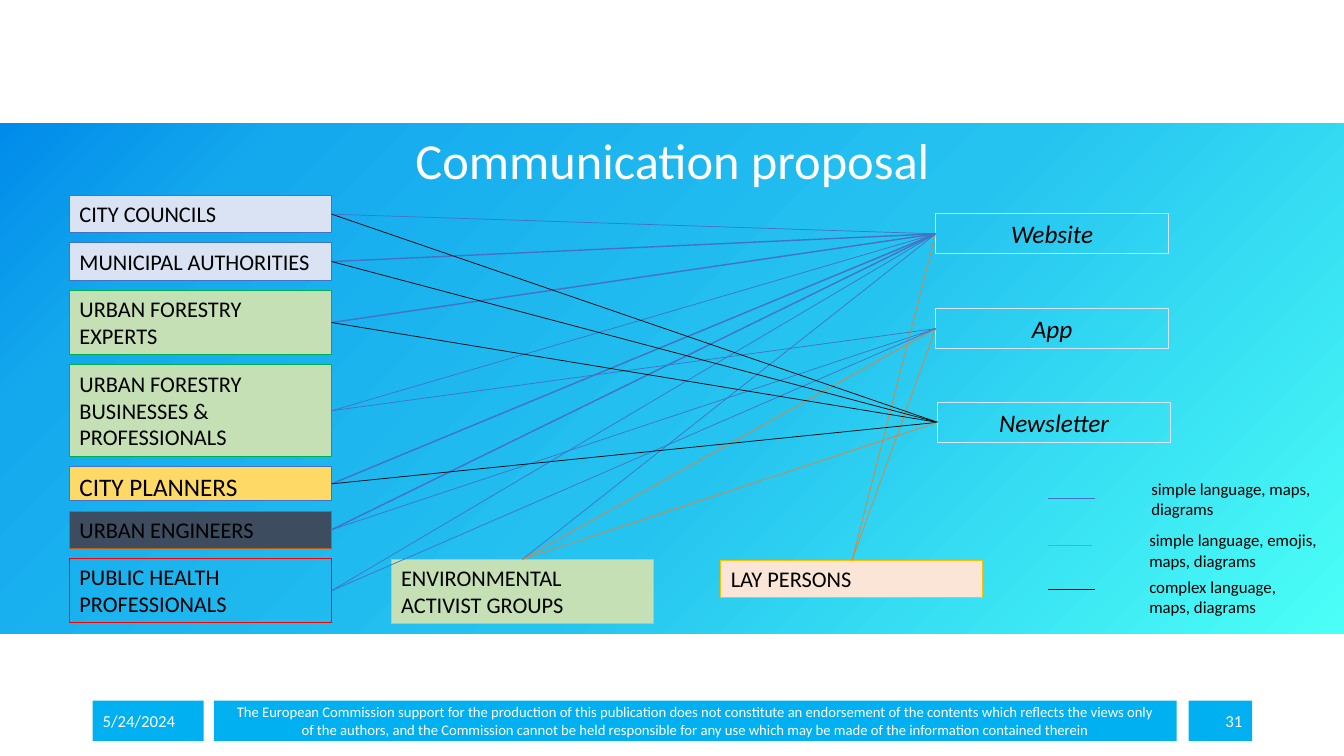
from dataclasses import dataclass

import pptx
import pptx.dml.color
import pptx.enum.shapes
import pptx.enum.text
import pptx.oxml.ns
import pptx.util
from lxml import etree
from pptx.util import Inches

ALIGN = pptx.enum.text.PP_ALIGN
ANCHOR = pptx.enum.text.MSO_ANCHOR


@dataclass(frozen=True)
class Theme:
    font: str = "Calibri"
    white: str = "FFFFFF"
    black: str = "000000"
    blue: str = "4472C4"
    orange: str = "ED7D31"
    pale_blue: str = "DAE3F3"
    pale_green: str = "C5E0B4"
    green: str = "00B050"
    yellow: str = "FFD966"
    amber: str = "FFC000"
    red: str = "FF0000"
    slate: str = "3D4C5F"
    rust: str = "C55A11"
    peach: str = "FBE5D6"
    footer_blue: str = "00B0F0"
    band: tuple = ((0, "4BFFF6"), (44, "25C3F0"), (84, "14A9ED"), (100, "008BEA"))
    title_size: float = 36
    large_size: float = 18
    label_size: float = 16
    small_size: float = 12
    disclaimer_size: float = 10.5


THEME = Theme()

# Stacked on the left: text, height, fill, outline, text size
AUDIENCES = [
    ("CITY COUNCILS", 0.37, THEME.pale_blue, THEME.blue, THEME.label_size),
    ("MUNICIPAL AUTHORITIES", 0.37, THEME.pale_blue, THEME.blue, THEME.label_size),
    ("URBAN FORESTRY EXPERTS", 0.64, THEME.pale_green, THEME.green, THEME.label_size),
    ("URBAN FORESTRY BUSINESSES & PROFESSIONALS", 0.91, THEME.pale_green, THEME.green, THEME.label_size),
    ("CITY PLANNERS", 0.34, THEME.yellow, THEME.blue, THEME.large_size),
    ("URBAN ENGINEERS", 0.37, THEME.slate, THEME.rust, THEME.label_size),
    ("PUBLIC HEALTH PROFESSIONALS", 0.64, None, THEME.red, THEME.label_size),
]
COUNCILS, AUTHORITIES, EXPERTS, BUSINESSES, PLANNERS, ENGINEERS, HEALTH = [row[0] for row in AUDIENCES]
ACTIVISTS, LAY = "ENVIRONMENTAL ACTIVIST GROUPS", "LAY PERSONS"

CHANNELS = [("Website", 9.28, 2.12), ("App", 9.28, 3.06), ("Newsletter", 9.3, 3.99)]

# Channel, colour, line width, audiences reached
LINKS = [
    ("Website", THEME.blue, 0.5, (COUNCILS, BUSINESSES, HEALTH, ACTIVISTS)),
    ("Website", THEME.blue, 1, (AUTHORITIES, EXPERTS, PLANNERS, ENGINEERS)),
    ("Website", THEME.orange, 0.5, (LAY,)),
    ("App", THEME.orange, 0.5, (LAY, ACTIVISTS)),
    ("App", THEME.blue, 0.5, (HEALTH, ENGINEERS, BUSINESSES)),
    ("Newsletter", THEME.black, 0.5, (COUNCILS, AUTHORITIES, EXPERTS, PLANNERS)),
    ("Newsletter", THEME.orange, 0.5, (ACTIVISTS,)),
]

# Text, text left, text top, line y, line end, colour, line width
LEGEND = [
    ("simple language, maps, diagrams", 11.32, 4.7, 4.94, 10.86, THEME.blue, 0.5),
    ("simple language, emojis, maps, diagrams", 11.3, 5.21, 5.41, 10.83, THEME.orange, 0.5),
    ("complex language, maps, diagrams", 11.3, 5.67, 5.85, 10.86, THEME.black, 1),
]

DISCLAIMER = (
    "The European Commission support for the production of this publication does not constitute "
    "an endorsement of the contents which reflects the views only",
    "of the authors, and the Commission cannot be held responsible for any use which may be made "
    "of the information contained therein",
)


def rgb(value):
    return pptx.dml.color.RGBColor.from_string(value)


def write(shape, lines, size, color=THEME.black, align=ALIGN.LEFT, anchor=ANCHOR.TOP, italic=False):
    frame = shape.text_frame
    frame.word_wrap = True
    frame.auto_size = pptx.enum.text.MSO_AUTO_SIZE.NONE
    frame.vertical_anchor = anchor
    for index, line in enumerate(lines):
        paragraph = frame.add_paragraph() if index else frame.paragraphs[0]
        paragraph.alignment = align
        run = paragraph.add_run()
        run.text = line
        run.font.name = THEME.font
        run.font.size = pptx.util.Pt(size)
        run.font.italic = italic
        run.font.color.rgb = rgb(color)


def add_box(slide, left, top, width, height, fill=None, outline=None):
    box = slide.shapes.add_shape(
        pptx.enum.shapes.MSO_SHAPE.RECTANGLE, Inches(left), Inches(top), Inches(width), Inches(height))
    box.shadow.inherit = False
    if fill:
        box.fill.solid()
        box.fill.fore_color.rgb = rgb(fill)
    else:
        box.fill.background()
    if outline:
        box.line.color.rgb = rgb(outline)
        box.line.width = pptx.util.Pt(0.75)
    else:
        box.line.fill.background()
    return box


def add_band(slide):
    """Add the diagonal gradient behind everything else."""
    band = add_box(slide, 0, 1.23, 13.33, 5.06)
    band.fill.gradient()
    band.fill.gradient_angle = 135
    qn = pptx.oxml.ns.qn
    stops = band._element.spPr.find(".//" + qn("a:gsLst"))
    for stop in list(stops):
        stops.remove(stop)
    for position, color in THEME.band:
        stop = etree.SubElement(stops, qn("a:gs"), pos=str(position * 1000))
        etree.SubElement(stop, qn("a:srgbClr"), val=color)
    slide.shapes._spTree.insert(2, band._element)


def add_title(slide, text):
    title = slide.shapes.title
    title.left, title.top = Inches(0.92), Inches(1.23)
    title.width, title.height = Inches(11.5), Inches(0.71)
    write(title, [text], THEME.title_size, THEME.white, ALIGN.CENTER, ANCHOR.BOTTOM)
    title.text_frame.paragraphs[0].line_spacing = 0.9


def add_line(slide, color, width, start=(0, 0), end=(0, 0)):
    line = slide.shapes.add_connector(
        pptx.enum.shapes.MSO_CONNECTOR.STRAIGHT, *map(Inches, start + end))
    line.line.color.rgb = rgb(color)
    line.line.width = pptx.util.Pt(width)
    etree.SubElement(line._element.spPr, pptx.oxml.ns.qn("a:effectLst"))
    return line


def add_audiences(slide):
    boxes = {}
    top, gap = 1.94, 0.1
    for text, height, fill, outline, size in AUDIENCES:
        boxes[text] = add_box(slide, 0.69, top, 2.6, height, fill, outline)
        write(boxes[text], [text], size)
        top += height + gap
    for text, left, top, height, fill in (
            (ACTIVISTS, 3.88, 5.55, 0.64, THEME.pale_green), (LAY, 7.15, 5.56, 0.37, THEME.peach)):
        boxes[text] = add_box(slide, left, top, 2.6, height, fill, THEME.amber)
        write(boxes[text], [text], THEME.label_size)
    return boxes


def add_channels(slide):
    boxes = {}
    for text, left, top in CHANNELS:
        boxes[text] = add_box(slide, left, top, 2.31, 0.4, outline=THEME.pale_blue)
        write(boxes[text], [text], THEME.large_size, align=ALIGN.CENTER, italic=True)
    return boxes


def add_links(slide, channels, audiences):
    for channel, color, width, reached in LINKS:
        for audience in reached:
            line = add_line(slide, color, width)
            line.begin_connect(channels[channel], 1)
            line.end_connect(audiences[audience], 0 if audience in (ACTIVISTS, LAY) else 3)


def add_legend(slide):
    for text, left, top, line_y, line_end, color, width in LEGEND:
        add_line(slide, color, width, (line_end, line_y), (10.39, line_y))
        label = slide.shapes.add_textbox(Inches(left), Inches(top), Inches(1.88), Inches(0.5))
        write(label, [text], THEME.small_size)


def add_footer(slide):
    for lines, left, width, size, align in (
            (["5/24/2024"], 0.92, 1.1, THEME.small_size, ALIGN.LEFT),
            (DISCLAIMER, 2.12, 9.55, THEME.disclaimer_size, ALIGN.CENTER),
            (["31"], 11.79, 0.63, THEME.small_size, ALIGN.RIGHT)):
        box = add_box(slide, left, 6.95, width, 0.4, THEME.footer_blue)
        write(box, lines, size, THEME.white, align, ANCHOR.MIDDLE)


def main():
    presentation = pptx.Presentation()
    presentation.slide_width, presentation.slide_height = Inches(13.33), Inches(7.5)
    slide = presentation.slides.add_slide(presentation.slide_layouts[5])
    add_band(slide)
    add_title(slide, "Communication proposal")
    add_footer(slide)
    audiences = add_audiences(slide)
    channels = add_channels(slide)
    add_links(slide, channels, audiences)
    add_legend(slide)
    presentation.save("out.pptx")


if __name__ == "__main__":
    main()
